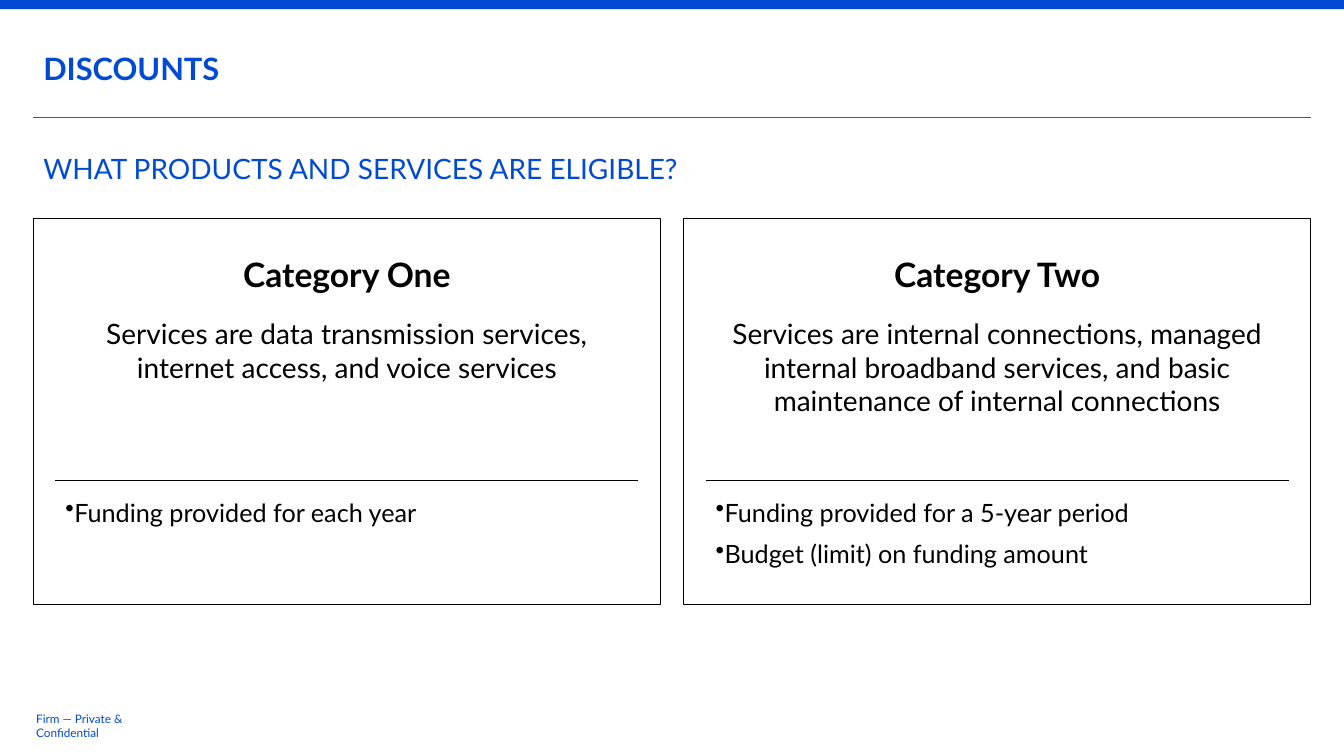
from dataclasses import dataclass

from lxml.etree import SubElement
from pptx import Presentation
from pptx.dml.color import RGBColor
from pptx.enum.shapes import MSO_CONNECTOR as Connector, MSO_SHAPE as Shape
from pptx.enum.text import MSO_ANCHOR as Anchor, MSO_AUTO_SIZE as AutoSize, PP_ALIGN as Align
from pptx.oxml.ns import qn
from pptx.util import Inches, Pt

SECTION = "DISCOUNTS"
QUESTION = "WHAT PRODUCTS AND SERVICES ARE ELIGIBLE?"
FOOTER = "Firm — Private & Confidential"
CATEGORIES = [
    {
        "name": "Category One",
        "services": "Services are data transmission services, internet access, and voice services",
        "funding": ["Funding provided for each year"],
    },
    {
        "name": "Category Two",
        "services": "Services are internal connections, managed internal broadband services, "
                    "and basic maintenance of internal connections",
        "funding": ["Funding provided for a 5-year period", "Budget (limit) on funding amount"],
    },
]


@dataclass(frozen=True)
class Theme:
    font: str = "Lato"
    blue: RGBColor = RGBColor(0x00, 0x4A, 0xD4)
    black: RGBColor = RGBColor(0x00, 0x00, 0x00)
    white: RGBColor = RGBColor(0xFF, 0xFF, 0xFF)
    grey: RGBColor = RGBColor(0x59, 0x59, 0x59)
    section: float = 22
    question: float = 20
    name: float = 24
    services: float = 20
    funding: float = 18
    footer: float = 8.4
    rule: float = 0.75


THEME = Theme()
WIDTH, HEIGHT, MARGIN = 13.33, 7.5, 0.33
CARD_TOP, CARD_WIDTH, CARD_HEIGHT, CARD_GAP = 2.17, 6.22, 3.83, 0.23
PADDING = 0.22
NAME_TOP, SERVICES_TOP, DIVIDER_TOP, FUNDING_TOP = 2.47, 3.09, 4.77, 4.88


def write(shape, lines, size, color, bold=False, align=Align.LEFT, after=0, bullet=False):
    """Fill a shape with one formatted paragraph per line."""
    frame = shape.text_frame
    frame.word_wrap = True
    for index, line in enumerate(lines):
        paragraph = frame.paragraphs[0] if index == 0 else frame.add_paragraph()
        paragraph.text = line
        paragraph.alignment = align
        paragraph.space_before = Pt(0)
        paragraph.space_after = Pt(after)
        font = paragraph.font
        font.name, font.size, font.bold = THEME.font, Pt(size), bold
        font.color.rgb = color
        properties = paragraph._p.get_or_add_pPr()
        properties.set("marL", "0")
        properties.set("indent", str(Inches(-0.2) if bullet else 0))
        mark = SubElement(properties, qn("a:buChar" if bullet else "a:buNone"))
        if bullet:
            mark.set("char", "•")
        properties.insert_element_before(mark, "a:tabLst", "a:defRPr", "a:extLst")


def place(shape, left, top, width, height):
    """Move and size a placeholder with its text centred vertically."""
    shape.left, shape.top = Inches(left), Inches(top)
    shape.width, shape.height = Inches(width), Inches(height)
    shape.text_frame.vertical_anchor = Anchor.MIDDLE
    shape.text_frame.auto_size = AutoSize.NONE


def add_text(slide, left, top, width, height, lines, size, color, **style):
    """Add a text box that grows with its text."""
    box = slide.shapes.add_textbox(Inches(left), Inches(top), Inches(width), Inches(height))
    write(box, lines, size, color, **style)
    box.text_frame.auto_size = AutoSize.SHAPE_TO_FIT_TEXT
    return box


def add_box(slide, left, top, width, height, fill, line=None):
    """Add a flat rectangle."""
    box = slide.shapes.add_shape(
        Shape.RECTANGLE, Inches(left), Inches(top), Inches(width), Inches(height))
    box.shadow.inherit = False
    box.fill.solid()
    box.fill.fore_color.rgb = fill
    if line is None:
        box.line.fill.background()
    else:
        box.line.color.rgb = line
        box.line.width = Pt(THEME.rule)


def add_rule(slide, left, top, width, color):
    """Add a horizontal line."""
    rule = slide.shapes.add_connector(
        Connector.STRAIGHT, Inches(left), Inches(top), Inches(left + width), Inches(top))
    rule.line.color.rgb = color
    rule.line.width = Pt(THEME.rule)
    SubElement(rule._element.spPr, qn("a:effectLst"))


def add_category(slide, left, category):
    """Draw one category card."""
    inner, width = left + PADDING, CARD_WIDTH - 2 * PADDING
    add_box(slide, left, CARD_TOP, CARD_WIDTH, CARD_HEIGHT, THEME.white, THEME.black)
    add_text(slide, inner, NAME_TOP, width, 0.5, [category["name"]],
             THEME.name, THEME.black, bold=True, align=Align.CENTER, after=4)
    add_text(slide, inner, SERVICES_TOP, width, 0.77, [category["services"]],
             THEME.services, THEME.black, align=Align.CENTER, after=4)
    add_rule(slide, inner, DIVIDER_TOP, width, THEME.black)
    add_text(slide, inner, FUNDING_TOP, width, 0.4, category["funding"],
             THEME.funding, THEME.black, after=8, bullet=True)


def main():
    """Build and save the slide."""
    presentation = Presentation()
    presentation.slide_width, presentation.slide_height = Inches(WIDTH), Inches(HEIGHT)
    slide = presentation.slides.add_slide(presentation.slide_layouts[1])
    title, section = slide.shapes.title, slide.placeholders[1]
    place(section, MARGIN, 0.33, 12.67, 0.69)
    write(section, [SECTION], THEME.section, THEME.blue, bold=True)
    place(title, MARGIN, 1.33, 12.67, 0.67)
    write(title, [QUESTION], THEME.question, THEME.blue)

    add_box(slide, 0, 0, WIDTH, 0.09, THEME.blue)
    add_rule(slide, MARGIN, 1.17, 12.67, THEME.grey)
    for index, category in enumerate(CATEGORIES):
        add_category(slide, MARGIN + index * (CARD_WIDTH + CARD_GAP), category)

    footer = add_text(slide, MARGIN, 7.03, 1.4, 0.34, [FOOTER], THEME.footer, THEME.blue)
    frame = footer.text_frame
    frame.margin_left = frame.margin_right = Inches(0.03)
    frame.margin_top = frame.margin_bottom = Inches(0.03)
    presentation.save("out.pptx")


if __name__ == "__main__":
    main()
